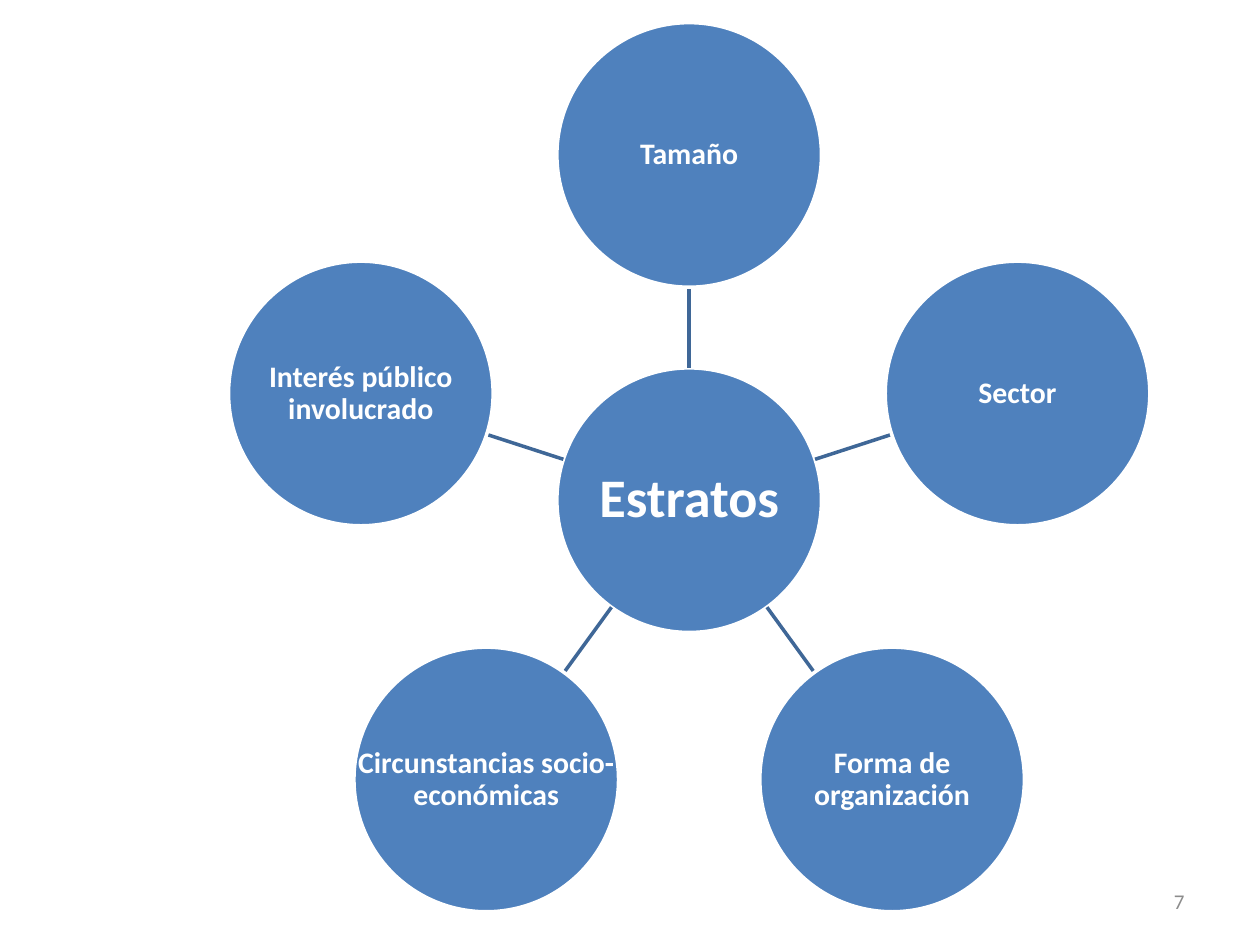
from math import cos, radians, sin

from lxml.etree import SubElement
from pptx import Presentation
from pptx.dml.color import RGBColor
from pptx.enum.shapes import MSO_CONNECTOR, MSO_SHAPE
from pptx.enum.text import MSO_ANCHOR, PP_ALIGN
from pptx.oxml.ns import qn
from pptx.util import Inches, Pt

HUB = "Estratos"
SATELLITES = [
    "Tamaño",
    "Sector",
    "Forma de organización",
    "Circunstancias socio-económicas",
    "Interés público involucrado",
]
PAGE_NUMBER = "7"

CENTER_X, CENTER_Y = 5.47, 3.97
ORBIT = 2.74
DIAMETER = 2.1
RADIUS = DIAMETER / 2
SPOKE_END = ORBIT - RADIUS
BLUE, DARK_BLUE, WHITE, GRAY = "4F81BD", "3F6797", "FFFFFF", "8C8C8C"


def color(hex_string):
    return RGBColor.from_string(hex_string)


def polar(angle, distance):
    return (CENTER_X + distance * cos(radians(angle)),
            CENTER_Y + distance * sin(radians(angle)))


def add_text(slide, text, box, size, hex_string, alignment, bold=False, inset=None):
    text_box = slide.shapes.add_textbox(*map(Inches, box))
    frame = text_box.text_frame
    frame.word_wrap = True
    frame.vertical_anchor = MSO_ANCHOR.MIDDLE
    if inset is not None:
        frame.margin_left = frame.margin_right = Inches(inset)
        frame.margin_top = frame.margin_bottom = Inches(inset)
    paragraph = frame.paragraphs[0]
    paragraph.text = text
    paragraph.alignment = alignment
    paragraph.font.name = "Calibri"
    paragraph.font.size = Pt(size)
    paragraph.font.bold = bold
    paragraph.font.color.rgb = color(hex_string)
    return paragraph


def add_circle(slide, text, center, size, inset):
    box = (center[0] - RADIUS, center[1] - RADIUS, DIAMETER, DIAMETER)
    circle = slide.shapes.add_shape(MSO_SHAPE.OVAL, *map(Inches, box))
    circle.shadow.inherit = False
    circle.fill.solid()
    circle.fill.fore_color.rgb = color(BLUE)
    circle.line.color.rgb = color(WHITE)
    circle.line.width = Pt(2)
    paragraph = add_text(slide, text, box, size, WHITE, PP_ALIGN.CENTER, True, inset)
    paragraph.line_spacing = 0.9


def add_spoke(slide, angle):
    ends = polar(angle, RADIUS) + polar(angle, SPOKE_END)
    spoke = slide.shapes.add_connector(MSO_CONNECTOR.STRAIGHT, *map(Inches, ends))
    spoke.line.color.rgb = color(DARK_BLUE)
    spoke.line.width = Pt(2)
    SubElement(spoke._element.spPr, qn("a:effectLst"))


def main():
    presentation = Presentation()
    presentation.slide_width = Inches(10)
    presentation.slide_height = Inches(7.5)
    slide = presentation.slides.add_slide(presentation.slide_layouts[6])

    add_circle(slide, HUB, (CENTER_X, CENTER_Y), 31, 0.02)
    for index, text in enumerate(SATELLITES):
        angle = -90 + index * 360 / len(SATELLITES)
        add_spoke(slide, angle)
        add_circle(slide, text, polar(angle, ORBIT), 17, 0.01)
    add_text(slide, PAGE_NUMBER, (7.17, 6.95, 2.33, 0.4), 12, GRAY, PP_ALIGN.RIGHT)

    presentation.save("out.pptx")


if __name__ == "__main__":
    main()
